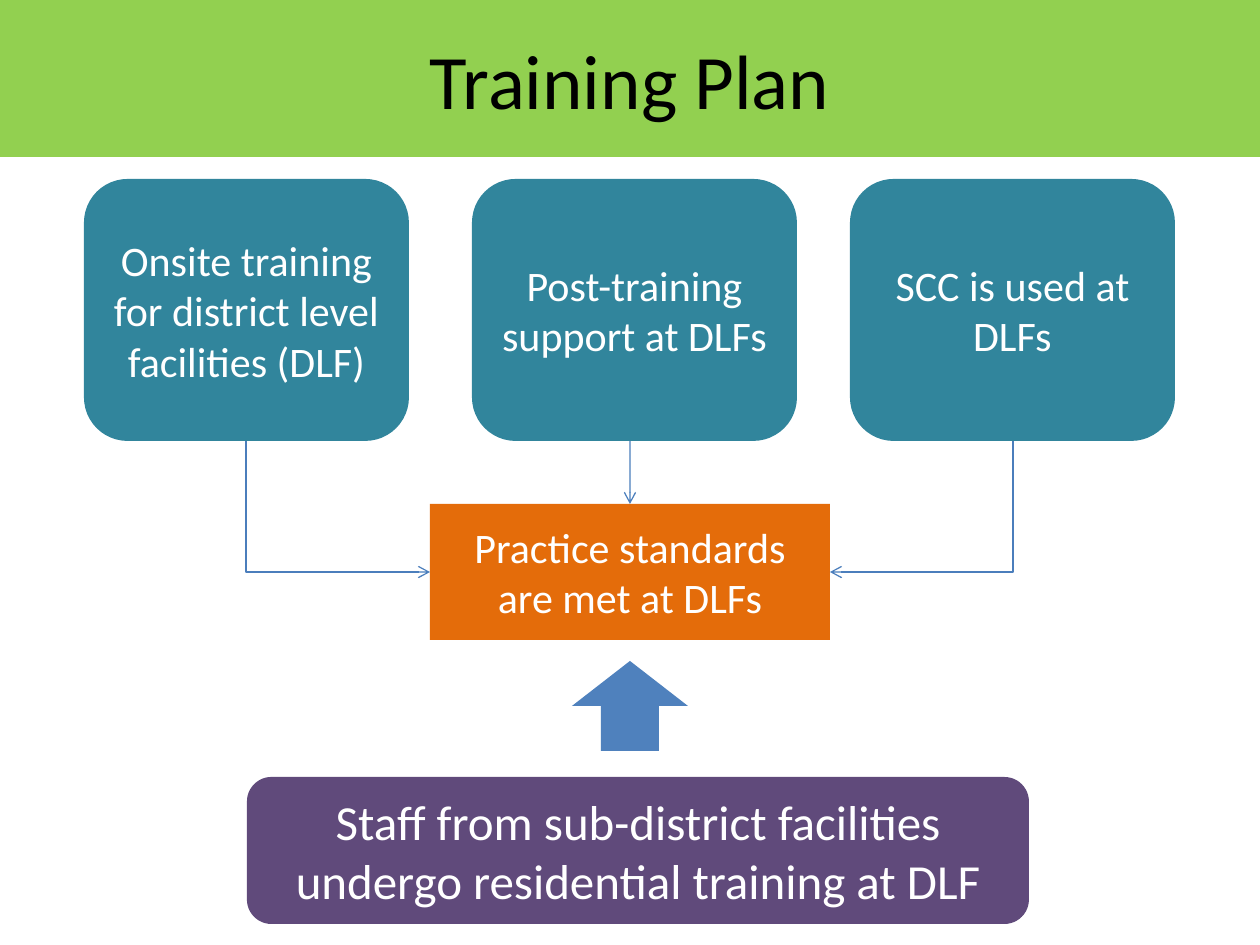
import pptx
import pptx.dml.color
import pptx.enum.shapes
import pptx.enum.text
import pptx.oxml
import pptx.oxml.ns
import pptx.util

RGB = pptx.dml.color.RGBColor
SHAPE = pptx.enum.shapes.MSO_SHAPE
CONNECTOR = pptx.enum.shapes.MSO_CONNECTOR
GREEN = RGB(0x92, 0xD0, 0x50)
TEAL = RGB(0x31, 0x85, 0x9C)
ORANGE = RGB(0xE4, 0x6C, 0x0A)
PURPLE = RGB(0x60, 0x4A, 0x7B)
BLUE = RGB(0x4F, 0x81, 0xBD)
LINE_BLUE = RGB(0x4B, 0x7E, 0xBC)
BLACK = RGB(0, 0, 0)
WHITE = RGB(0xFF, 0xFF, 0xFF)
PX = 914400 / 126


def style(sp, box, fill, text="", size=24, color=WHITE):
    sp.left, sp.top, sp.width, sp.height = [round(v * PX) for v in box]
    sp.fill.solid()
    sp.fill.fore_color.rgb = fill
    sp.line.fill.background()
    if text:
        tf = sp.text_frame
        tf.word_wrap = True
        tf.vertical_anchor = pptx.enum.text.MSO_ANCHOR.MIDDLE
        p = tf.paragraphs[0]
        p.text = text
        p.alignment = pptx.enum.text.PP_ALIGN.CENTER
        p.font.name = "Calibri"
        p.font.size = pptx.util.Pt(size)
        p.font.color.rgb = color


def add_block(kind, *args):
    sp = slide.shapes.add_shape(kind, 0, 0, 0, 0)
    sp.shadow.inherit = False
    style(sp, *args)
    return sp


prs = pptx.Presentation()
prs.slide_width = round(1260 * PX)
prs.slide_height = round(945 * PX)
slide = prs.slides.add_slide(prs.slide_layouts[5])

# Title band
style(slide.shapes.title, (0, 0, 1260, 157), GREEN, "Training Plan", 44, BLACK)

# Three inputs
for x, text in [(84, "Onsite training for district level facilities (DLF)"),
                (472, "Post-training support at DLFs"),
                (850, "SCC is used at DLFs")]:
    add_block(SHAPE.ROUNDED_RECTANGLE, (x, 179, 325, 262), TEAL, text)

# Goal
goal = add_block(SHAPE.RECTANGLE, (430, 504, 400, 136), ORANGE,
                 "Practice standards are met at DLFs")

# Arrows from the inputs to the goal
for kind, x1, x2, y2 in [(CONNECTOR.ELBOW, 246, 430, 572),
                         (CONNECTOR.STRAIGHT, 630, 630, 504),
                         (CONNECTOR.ELBOW, 1013, 830, 572)]:
    line = slide.shapes.add_connector(
        kind, *[round(v * PX) for v in (x1, 441, x2, y2)])
    line.line.color.rgb = LINE_BLUE
    line.line.width = pptx.util.Pt(0.75)
    ln = line.line._get_or_add_ln()
    ln.append(pptx.oxml.parse_xml(
        f'<a:tailEnd {pptx.oxml.ns.nsdecls("a")} type="arrow"/>'))
    line._element.spPr.append(pptx.oxml.parse_xml(
        f'<a:effectLst {pptx.oxml.ns.nsdecls("a")}/>'))
    if kind == CONNECTOR.STRAIGHT:
        line.end_connect(goal, 0)
    else:
        # Bend right at the start: down first, then sideways
        geom = line._element.spPr.find(pptx.oxml.ns.qn("a:prstGeom"))
        av = geom.find(pptx.oxml.ns.qn("a:avLst"))
        av.append(pptx.oxml.parse_xml(
            f'<a:gd {pptx.oxml.ns.nsdecls("a")} name="adj1" fmla="val 0"/>'))

# Staff training feeding the goal
add_block(SHAPE.ROUNDED_RECTANGLE, (247, 777, 782, 147), PURPLE,
          "Staff from sub-district facilities undergo residential training at DLF", 28)
add_block(SHAPE.UP_ARROW, (572, 661, 116, 90), BLUE)

prs.save("out.pptx")
